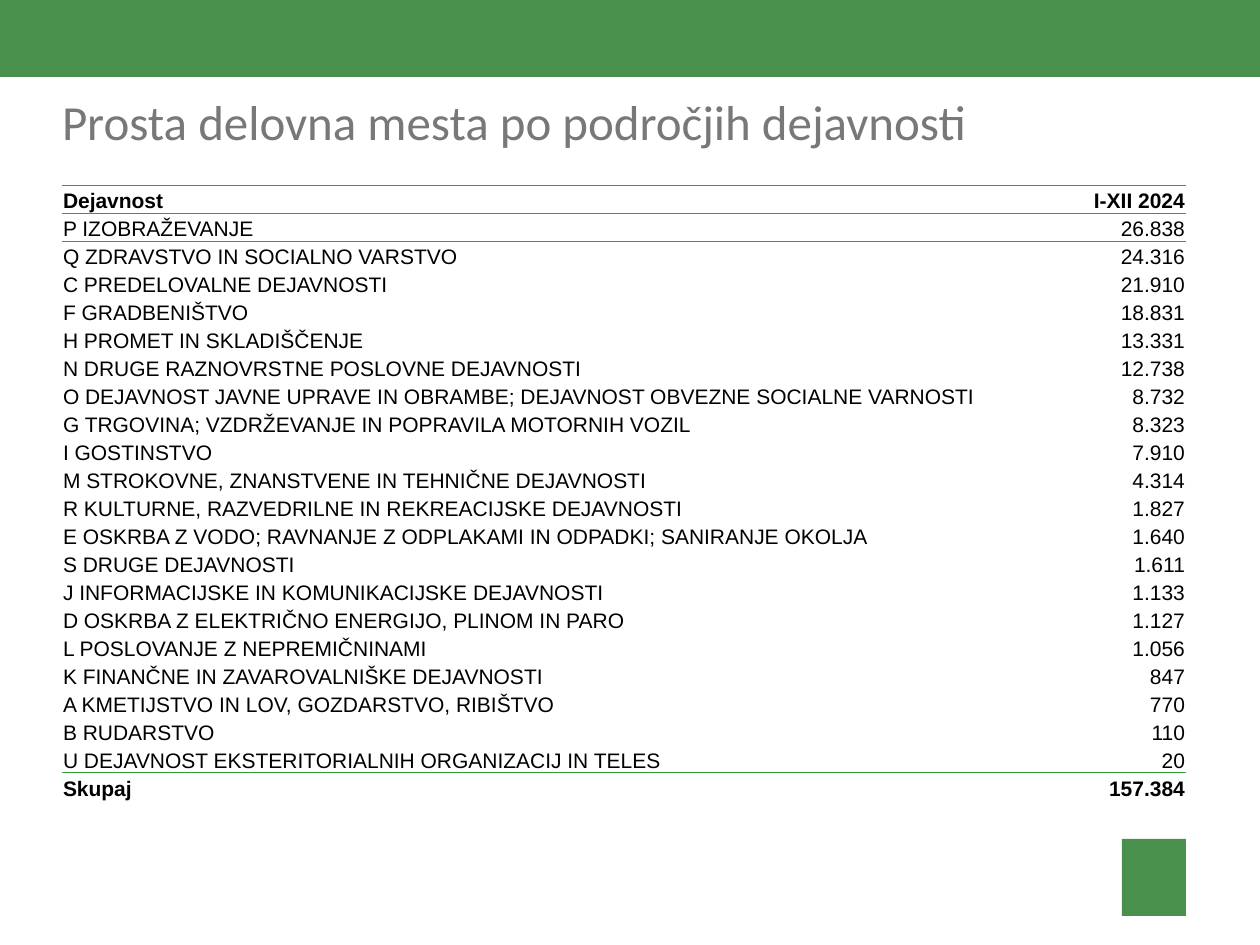
from lxml.etree import SubElement
from pptx import Presentation
from pptx.dml.color import RGBColor
from pptx.enum.shapes import MSO_SHAPE
from pptx.enum.text import MSO_ANCHOR, PP_ALIGN
from pptx.oxml.ns import qn
from pptx.util import Emu, Pt

EMU_PER_PX = 914400 // 126
BRAND_GREEN = RGBColor(0x49, 0x90, 0x4D)
RULE_GREEN = RGBColor(0x33, 0x9E, 0x35)
TITLE_GRAY = RGBColor(0x79, 0x77, 0x77)
BLACK = RGBColor(0, 0, 0)
NO_TABLE_STYLE = "{2D5ABB26-0587-4C30-8999-92F81FD0307C}"

VACANCIES = [
    ("Dejavnost", "I-XII 2024"),
    ("P IZOBRAŽEVANJE", "26.838"),
    ("Q ZDRAVSTVO IN SOCIALNO VARSTVO", "24.316"),
    ("C PREDELOVALNE DEJAVNOSTI", "21.910"),
    ("F GRADBENIŠTVO", "18.831"),
    ("H PROMET IN SKLADIŠČENJE", "13.331"),
    ("N DRUGE RAZNOVRSTNE POSLOVNE DEJAVNOSTI", "12.738"),
    ("O DEJAVNOST JAVNE UPRAVE IN OBRAMBE; DEJAVNOST OBVEZNE SOCIALNE VARNOSTI", "8.732"),
    ("G TRGOVINA; VZDRŽEVANJE IN POPRAVILA MOTORNIH VOZIL", "8.323"),
    ("I GOSTINSTVO", "7.910"),
    ("M STROKOVNE, ZNANSTVENE IN TEHNIČNE DEJAVNOSTI", "4.314"),
    ("R KULTURNE, RAZVEDRILNE IN REKREACIJSKE DEJAVNOSTI", "1.827"),
    ("E OSKRBA Z VODO; RAVNANJE Z ODPLAKAMI IN ODPADKI; SANIRANJE OKOLJA", "1.640"),
    ("S DRUGE DEJAVNOSTI", "1.611"),
    ("J INFORMACIJSKE IN KOMUNIKACIJSKE DEJAVNOSTI", "1.133"),
    ("D OSKRBA Z ELEKTRIČNO ENERGIJO, PLINOM IN PARO", "1.127"),
    ("L POSLOVANJE Z NEPREMIČNINAMI", "1.056"),
    ("K FINANČNE IN ZAVAROVALNIŠKE DEJAVNOSTI", "847"),
    ("A KMETIJSTVO IN LOV, GOZDARSTVO, RIBIŠTVO", "770"),
    ("B RUDARSTVO", "110"),
    ("U DEJAVNOST EKSTERITORIALNIH ORGANIZACIJ IN TELES", "20"),
    ("Skupaj", "157.384"),
]


def px(length):
    return Emu(length * EMU_PER_PX)


class SlideBuilder:
    title_font = "Calibri"
    table_font = "Arial"

    def __init__(self, slide):
        self.slide = slide

    def format_text(self, paragraph, font, size, color, align, bold=False):
        paragraph.alignment = align
        for run in paragraph.runs:
            run.font.name = font
            run.font.size = Pt(size)
            run.font.bold = bold
            run.font.color.rgb = color

    def title(self, text, left, top, width, height):
        shape = self.slide.shapes.title
        shape.left, shape.top, shape.width, shape.height = map(px, (left, top, width, height))
        frame = shape.text_frame
        frame.text = text
        frame.margin_left = frame.margin_right = frame.margin_top = frame.margin_bottom = 0
        frame.vertical_anchor = MSO_ANCHOR.MIDDLE
        self.format_text(frame.paragraphs[0], self.title_font, 28, TITLE_GRAY, PP_ALIGN.LEFT)

    def block(self, left, top, width, height):
        shape = self.slide.shapes.add_shape(
            MSO_SHAPE.RECTANGLE, *map(px, (left, top, width, height)))
        shape.shadow.inherit = False
        shape.fill.solid()
        shape.fill.fore_color.rgb = BRAND_GREEN
        shape.line.fill.background()

    def border(self, cell, side):
        line = SubElement(cell._tc.get_or_add_tcPr(), qn(f"a:{side}"), w=str(Pt(0.5)))
        fill = SubElement(line, qn("a:solidFill"))
        SubElement(fill, qn("a:srgbClr"), val=str(RULE_GREEN))

    def cell(self, cell, text, align, bold, sides):
        cell.text = text
        cell.vertical_anchor = MSO_ANCHOR.BOTTOM
        cell.margin_left = cell.margin_right = cell.margin_top = px(1)
        cell.margin_bottom = 0
        for side in sides:
            self.border(cell, side)
        cell.fill.background()
        self.format_text(cell.text_frame.paragraphs[0], self.table_font, 12, BLACK, align, bold)

    def table(self, rows, left, top, column_widths, row_height):
        frame = self.slide.shapes.add_table(
            len(rows), len(column_widths), px(left), px(top),
            px(sum(column_widths)), px(row_height * len(rows)))
        table = frame.table
        table.first_row = table.horz_banding = False
        table._tbl.tblPr.find(qn("a:tableStyleId")).text = NO_TABLE_STYLE
        for column, width in zip(table.columns, column_widths):
            column.width = px(width)
        # Rules run around the header and above the total
        last = len(rows) - 1
        rules = {0: ("lnT", "lnB"), 1: ("lnT",), last - 1: ("lnB",), last: ("lnT",)}
        for index, texts in enumerate(rows):
            table.rows[index].height = px(row_height)
            for column, (text, align) in enumerate(zip(texts, (PP_ALIGN.LEFT, PP_ALIGN.RIGHT))):
                self.cell(table.cell(index, column), text, align,
                          index in (0, last), rules.get(index, ()))


def main():
    presentation = Presentation()
    presentation.slide_width, presentation.slide_height = px(1260), px(945)
    slide = presentation.slides.add_slide(presentation.slide_layouts[5])
    builder = SlideBuilder(slide)

    # Top band and title
    builder.block(0, -1, 1260, 78)
    builder.title("Prosta delovna mesta po področjih dejavnosti", 62, 86, 1167, 69)

    # Vacancies by activity
    builder.table(VACANCIES, 62, 185, (959, 165), 28)

    # Plain corner mark
    builder.block(1122, 839, 64, 77)

    presentation.save("out.pptx")


if __name__ == "__main__":
    main()
